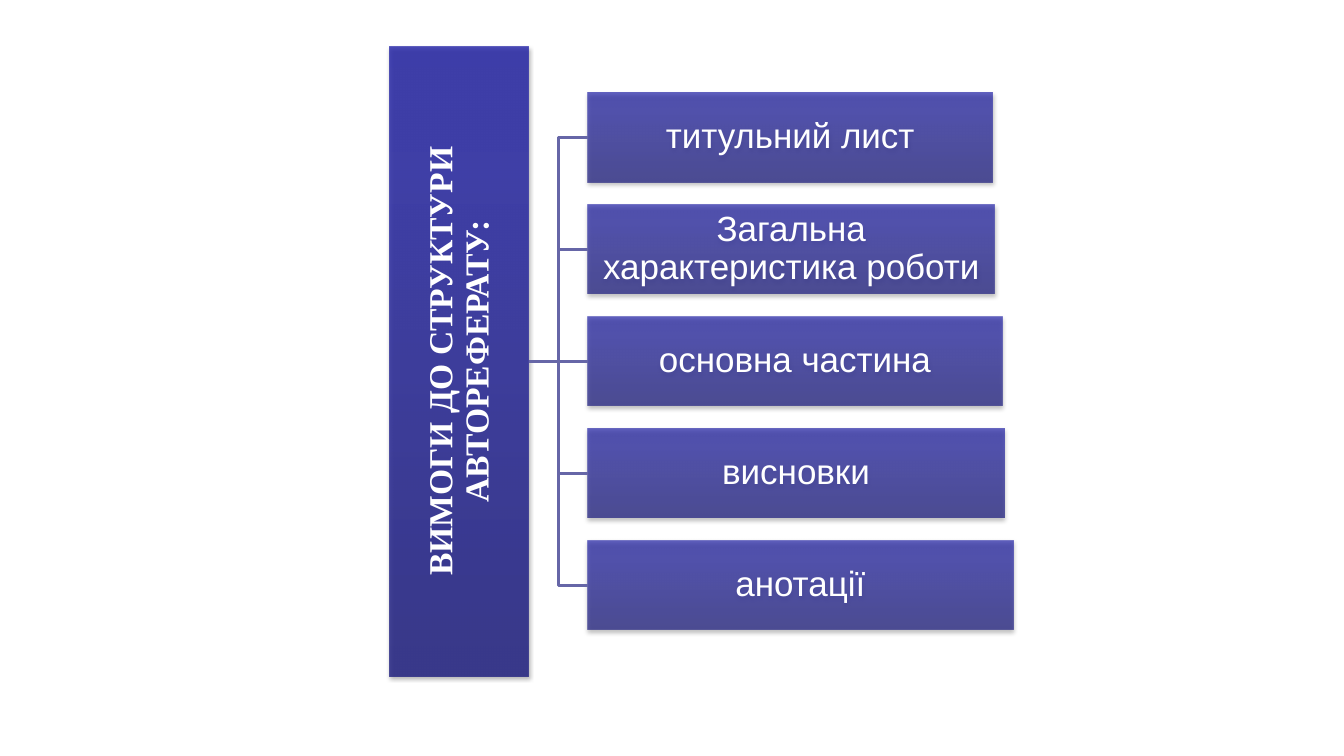
from lxml.etree import SubElement
from pptx import Presentation
from pptx.dml.color import RGBColor
from pptx.enum.shapes import MSO_CONNECTOR, MSO_SHAPE
from pptx.enum.text import MSO_ANCHOR, MSO_AUTO_SIZE, PP_ALIGN
from pptx.oxml import parse_xml
from pptx.oxml.ns import nsdecls, qn
from pptx.util import Cm, Pt

COLORS = {
    "dark": "1B1B7E",
    "middle": "2323A3",
    "bright": "2020A6",
    "line": "6666A7",
    "text": "FFFFFF",
    "shadow": "000000",
}
HEADING = "ВИМОГИ ДО СТРУКТУРИ АВТОРЕФЕРАТУ:"
SECTIONS = [
    ("титульний лист", 10.21),
    ("Загальна характеристика роботи", 10.26),
    ("основна частина", 10.45),
    ("висновки", 10.5),
    ("анотації", 10.72),
]


def add_panel(slide, left, top, width, height, opacity):
    """Add a rectangle with a translucent upward gradient and soft shadow."""
    panel = slide.shapes.add_shape(
        MSO_SHAPE.RECTANGLE, Cm(left), Cm(top), Cm(width), Cm(height)
    )
    panel.line.fill.background()
    stops = "".join(
        f'<a:gs pos="{position * 1000}"><a:srgbClr val="{COLORS[name]}">'
        f'<a:alpha val="{opacity * 1000}"/></a:srgbClr></a:gs>'
        for position, name in ((0, "dark"), (80, "middle"), (100, "bright"))
    )
    gradient = parse_xml(
        f'<a:gradFill {nsdecls("a")} rotWithShape="0"><a:gsLst>{stops}</a:gsLst>'
        '<a:lin ang="16200000" scaled="0"/></a:gradFill>'
    )
    properties = panel.element.spPr
    properties.find(qn("a:ln")).addprevious(gradient)
    panel.shadow.inherit = False
    properties.find(qn("a:effectLst")).append(parse_xml(
        f'<a:outerShdw {nsdecls("a")} blurRad="{Pt(3.1)}" dist="{Pt(1.8)}" '
        f'dir="5400000" rotWithShape="0"><a:srgbClr val="{COLORS["shadow"]}">'
        '<a:alpha val="35000"/></a:srgbClr></a:outerShdw>'
    ))
    return panel


def write_text(shape, text, *, size, font, bold=False):
    """Write one centred paragraph into a shape."""
    frame = shape.text_frame
    frame.word_wrap = True
    frame.auto_size = MSO_AUTO_SIZE.NONE
    frame.vertical_anchor = MSO_ANCHOR.MIDDLE
    frame.margin_left = frame.margin_right = Cm(0.05)
    frame.margin_top = frame.margin_bottom = Cm(0.05)
    paragraph = frame.paragraphs[0]
    paragraph.alignment = PP_ALIGN.CENTER
    paragraph.line_spacing = 0.9
    run = paragraph.add_run()
    run.text = text
    run.font.size = Pt(size)
    run.font.name = font
    run.font.bold = bold
    run.font.color.rgb = RGBColor.from_string(COLORS["text"])


def place_heading(slide, left, top, width, height):
    """Draw the heading panel and turn the title upright over it."""
    panel = add_panel(slide, left, top, width, height, 80)
    title = slide.shapes.title
    title.left = Cm(left + (width - height) / 2)
    title.top = Cm(top + (height - width) / 2)
    title.width, title.height = Cm(height), Cm(width)
    title.rotation = 270
    write_text(title, HEADING, size=24, font="Times New Roman", bold=True)
    panel.element.addnext(title.element)
    return panel


def place_sections(slide, left, top, height, gap):
    """Stack the section panels downwards from the given corner."""
    panels = []
    for index, (text, width) in enumerate(SECTIONS):
        panel = add_panel(
            slide, left, top + index * (height + gap), width, height, 70
        )
        write_text(panel, text, size=25, font="Arial")
        panels.append(panel)
    return panels


def join_panels(slide, heading, panels):
    """Join the heading's right side to the left side of every panel."""
    for index, panel in enumerate(panels):
        is_middle = index == len(panels) // 2
        kind = MSO_CONNECTOR.STRAIGHT if is_middle else MSO_CONNECTOR.ELBOW
        connector = slide.shapes.add_connector(kind, 0, 0, 0, 0)
        connector.begin_connect(heading, 3)
        connector.end_connect(panel, 1)
        connector.line.color.rgb = RGBColor.from_string(COLORS["line"])
        connector.line.width = Pt(2)
        SubElement(connector.element.spPr, qn("a:effectLst"))


def main():
    """Build and save the presentation."""
    presentation = Presentation()
    presentation.slide_width = Cm(33.87)
    presentation.slide_height = Cm(19.05)
    slide = presentation.slides.add_slide(presentation.slide_layouts[5])
    heading = place_heading(slide, left=9.83, top=1.17, width=3.5, height=15.87)
    panels = place_sections(slide, left=14.81, top=2.34, height=2.25, gap=0.57)
    join_panels(slide, heading, panels)
    presentation.save("out.pptx")


if __name__ == "__main__":
    main()
